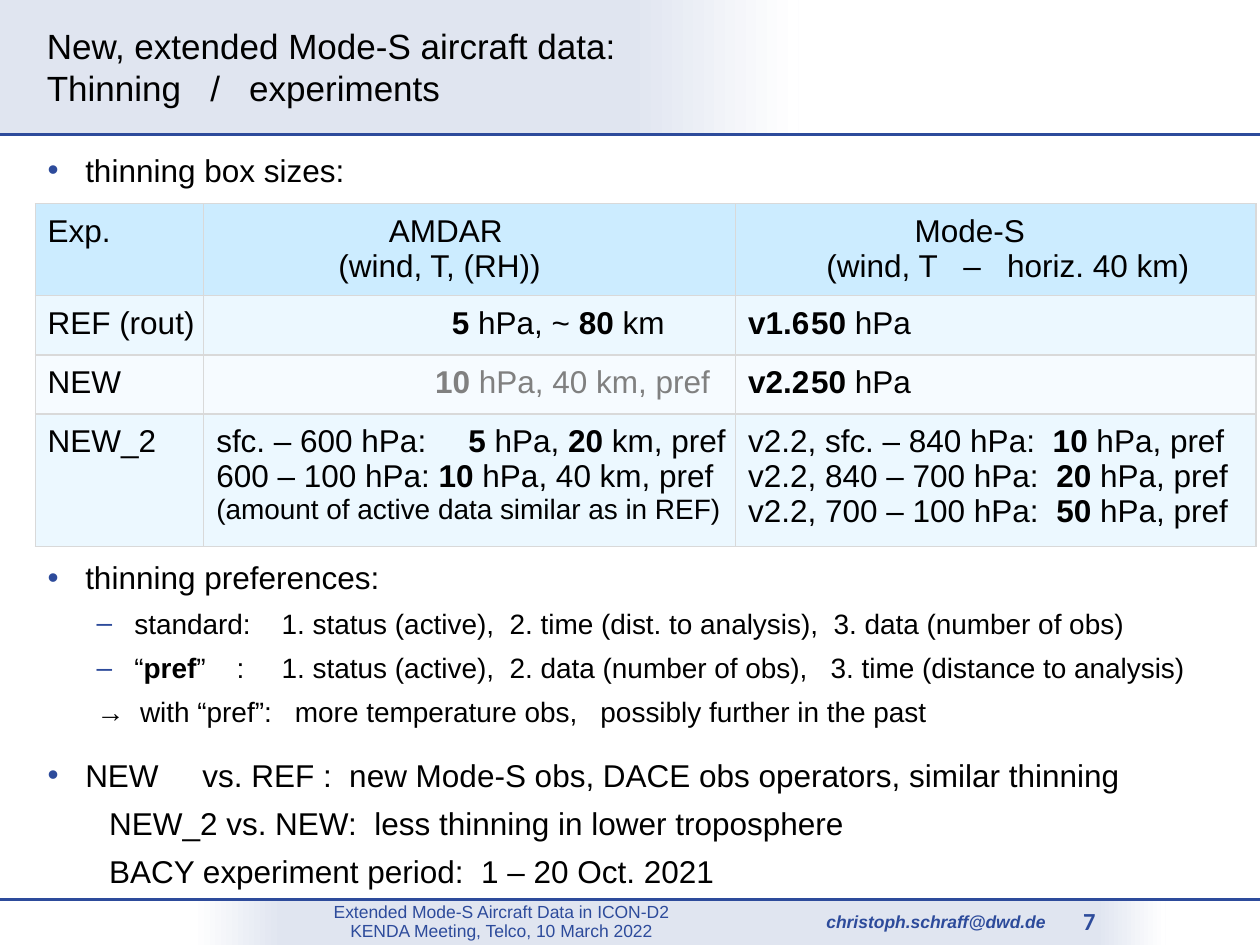
from lxml import etree
from pptx import Presentation
from pptx.dml.color import RGBColor
from pptx.enum.shapes import MSO_CONNECTOR, MSO_SHAPE
from pptx.enum.text import MSO_ANCHOR, MSO_AUTO_SIZE, PP_ALIGN
from pptx.oxml.ns import qn
from pptx.util import Cm, Pt

RECTANGLE = MSO_SHAPE.RECTANGLE
STRAIGHT = MSO_CONNECTOR.STRAIGHT
LEFT, CENTER = PP_ALIGN.LEFT, PP_ALIGN.CENTER
TOP, MIDDLE = MSO_ANCHOR.TOP, MSO_ANCHOR.MIDDLE

BLUE, BAND, WHITE, BLACK, GRAY = "2D4B9B", "E0E5F0", "FFFFFF", "000000", "808080"
HEADER_ROW, ODD_ROW, EVEN_ROW, GRID = "CCECFF", "ECF8FF", "F6FBFF", "D9D9D9"
TITLE_ONLY = 5


def rgb(value):
    return RGBColor.from_string(value)


def child(parent, tag, **attributes):
    return etree.SubElement(parent, qn(tag), {k: str(v) for k, v in attributes.items()})


def write(frame, text, size=18, color=BLACK, font="Arial", bold=False, italic=False,
          align=LEFT, before=0, spacing=None, margin=0, hanging=0, bullet=None, tab=None):
    """Add one paragraph; parts between ** marks are bold."""
    paragraph = frame.paragraphs[0]
    first = not paragraph.runs
    if not first:
        paragraph = frame.add_paragraph()
    props = paragraph._p.get_or_add_pPr()
    props.set("marL", str(Cm(margin)))
    props.set("indent", str(-Cm(hanging)))
    if bullet:
        child(child(props, "a:buClr"), "a:srgbClr", val=BLUE)
        child(props, "a:buFont", typeface="Arial")
        child(props, "a:buChar", char=bullet)
    else:
        child(props, "a:buNone")
    if tab:
        child(child(props, "a:tabLst"), "a:tab", pos=Cm(tab), algn="l")
    paragraph.alignment = align
    paragraph.space_before = Pt(0 if first else before)
    if spacing:
        paragraph.line_spacing = spacing
    for index, part in enumerate(text.split("**")):
        if part:
            run = paragraph.add_run()
            run.text = part
            run.font.name, run.font.size = font, Pt(size)
            run.font.bold = bold or index % 2 == 1
            run.font.italic = italic
            run.font.color.rgb = rgb(color)


class SlideBuilder:
    def __init__(self, slide):
        self.slide = slide
        self.shapes = slide.shapes

    def band(self, left, top, width, height, start, end=None):
        band = self.shapes.add_shape(RECTANGLE, Cm(left), Cm(top), Cm(width), Cm(height))
        band.shadow.inherit = False
        band.line.fill.background()
        if end:
            band.fill.gradient()
            band.fill.gradient_angle = 0
            for stop, color in zip(band.fill.gradient_stops, (start, end)):
                stop.color.rgb = rgb(color)
        else:
            band.fill.solid()
            band.fill.fore_color.rgb = rgb(start)

    def rule(self, top):
        rule = self.shapes.add_connector(STRAIGHT, 0, Cm(top), Cm(25.4), Cm(top))
        rule.line.color.rgb = rgb(BLUE)
        rule.line.width = Pt(1.75)
        child(rule._element.spPr, "a:effectLst")

    def title(self, left, top, width, height, lines):
        title = self.shapes.title
        title.left, title.top, title.width, title.height = map(Cm, (left, top, width, height))
        self.shapes._spTree.append(title._element)  # in front of the header band
        frame = title.text_frame
        frame.auto_size = MSO_AUTO_SIZE.NONE
        frame.vertical_anchor = MIDDLE
        for line in lines:
            write(frame, line, size=20)

    def text(self, left, top, width, height, anchor=TOP, wrap=True):
        box = self.shapes.add_textbox(Cm(left), Cm(top), Cm(width), Cm(height))
        frame = box.text_frame
        frame.word_wrap = wrap
        frame.vertical_anchor = anchor
        return frame

    def table(self, left, top, widths, heights, rows, fills):
        table = self.shapes.add_table(len(rows), len(widths), Cm(left), Cm(top),
                                      Cm(sum(widths)), Cm(sum(heights))).table
        for column, width in zip(table.columns, widths):
            column.width = Cm(width)
        for row, height, contents, fill in zip(table.rows, heights, rows, fills):
            row.height = Cm(height)
            for cell, lines in zip(row.cells, contents):
                self.cell(cell, lines, fill)

    def cell(self, cell, lines, fill):
        cell.margin_left, cell.margin_right = Cm(0.25), Cm(0.1)
        cell.margin_top, cell.margin_bottom = Cm(0.2), Cm(0.13)
        for text, style in lines:
            write(cell.text_frame, text, **style)
        props = cell._tc.get_or_add_tcPr()
        for side in ("a:lnL", "a:lnR", "a:lnT", "a:lnB"):
            border = child(props, side, w=Pt(0.75))
            child(child(border, "a:solidFill"), "a:srgbClr", val=GRID)
        cell.fill.solid()
        cell.fill.fore_color.rgb = rgb(fill)


def line(text, **style):
    return text, style


def main():
    prs = Presentation()
    prs.slide_width, prs.slide_height = Cm(25.4), Cm(19.05)
    page = SlideBuilder(prs.slides.add_slide(prs.slide_layouts[TITLE_ONLY]))

    # Footer
    footer_top, footer_height = 18.14, 0.91
    page.band(4.29, footer_top, 18.59, footer_height, BAND)
    page.band(22.1, footer_top, 1.4, footer_height, BAND, WHITE)
    page.band(3.89, footer_top, 1.8, footer_height, WHITE, BAND)
    email = page.text(16.41, footer_top, 5.31, 0.86, MIDDLE, wrap=False)
    write(email, "christoph.schraff@dwd.de", size=10, color=BLUE, bold=True, italic=True)
    meeting = page.text(4.9, footer_top, 10.41, footer_height, MIDDLE, wrap=False)
    for text in ("Extended Mode-S Aircraft Data in ICON-D2", "KENDA Meeting, Telco, 10 March 2022"):
        write(meeting, text, size=10, color=BLUE, align=CENTER, spacing=0.9)
    page_number = page.text(21.01, footer_top, 1.9, 0.84, MIDDLE)
    write(page_number, "7", size=14, color=BLUE, font="Calibri", bold=True, align=CENTER)
    page.rule(footer_top)

    # Header
    page.band(0, 0, 12.7, 2.72, BAND)
    page.band(12.7, 0, 3.4, 2.72, BAND, WHITE)
    page.rule(2.72)
    page.title(0.69, 0.33, 14.4, 2.01,
               ["New, extended Mode-S aircraft data:", "Thinning   /   experiments"])

    topic = dict(margin=0.76, hanging=0.76, bullet="•", before=6)
    detail = dict(size=16, margin=1.75, hanging=0.76, bullet="–", before=6, tab=4.72)
    follow_up = dict(margin=1.24, before=6)

    # Thinning box sizes
    box_sizes = page.text(0.71, 2.92, 6.81, 1.04)
    write(box_sizes, "thinning box sizes:", **topic)
    page.table(0.71, 4.11, [3.4, 10.72, 10.49], [1.85, 1.19, 1.19, 2.68], [
        [[line("Exp.")],
         [line("AMDAR", margin=3.48), line("(wind, T, (RH))", margin=2.46)],
         [line("Mode-S", margin=3.36), line("(wind, T   –   horiz. 40 km)", margin=1.58)]],
        [[line("REF (rout)")],
         [line("**5** hPa, ~ **80** km", margin=4.75)],
         [line("**v1.6**\t**50** hPa", tab=6.17)]],
        [[line("NEW")],
         [line("**10** hPa, 40 km, pref", margin=4.41, color=GRAY)],
         [line("**v2.2**\t**50** hPa", tab=6.17)]],
        [[line("NEW_2")],
         [line("sfc. – 600 hPa:\t**5** hPa, **20** km, pref", tab=4.75),
          line("600 – 100 hPa: **10** hPa, 40 km, pref"),
          line("(amount of active data similar as in REF)", size=16)],
         [line(f"v2.2, {layer} hPa:  **{depth}** hPa, pref") for layer, depth in
          (("sfc. – 840", 10), ("840 – 700", 20), ("700 – 100", 50))]],
    ], [HEADER_ROW, ODD_ROW, EVEN_ROW, ODD_ROW])

    # Thinning preferences
    preferences = page.text(0.71, 11.13, 24.21, 3.73)
    write(preferences, "thinning preferences:", **topic)
    write(preferences, "standard:\t1. status (active),  2. time (dist. to analysis),"
          "  3. data (number of obs)", **detail)
    write(preferences, "“**pref**”    :\t1. status (active),  2. data (number of obs),"
          "   3. time (distance to analysis)", **detail)
    write(preferences, "→  with “pref”:   more temperature obs,   possibly further in the past",
          size=16, margin=0.99, before=6)

    # Experiment comparison
    comparison = page.text(0.71, 15.11, 24.21, 3)
    write(comparison, "NEW     vs. REF :  new Mode-S obs, DACE obs operators, similar thinning",
          **topic)
    write(comparison, "NEW_2 vs. NEW:  less thinning in lower troposphere", **follow_up)
    write(comparison, "BACY experiment period:  1 – 20 Oct. 2021", **follow_up)

    prs.save("out.pptx")


if __name__ == "__main__":
    main()
